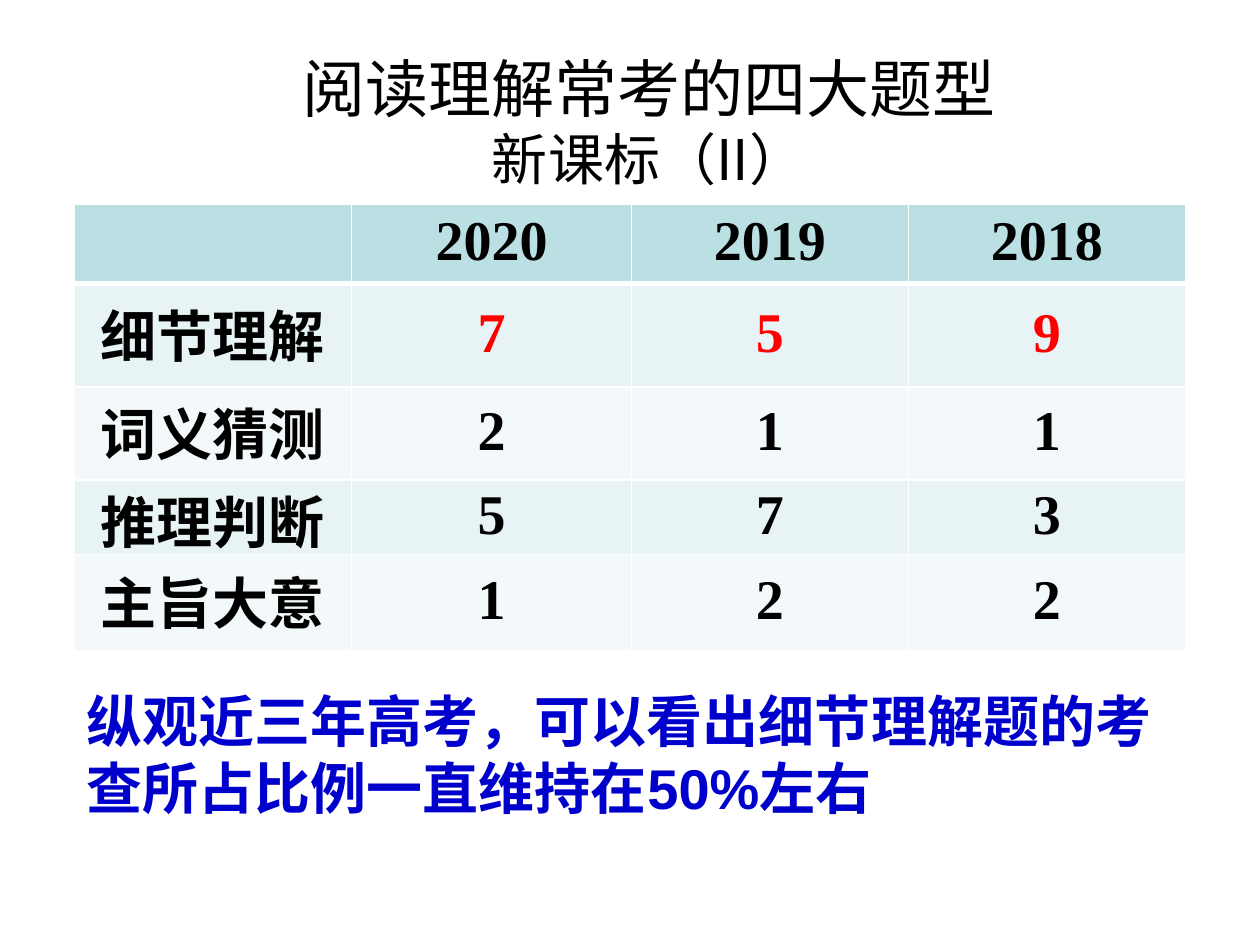
from lxml.etree import SubElement
from pptx import Presentation
from pptx.dml.color import RGBColor
from pptx.enum.text import MSO_ANCHOR as Anchor, PP_ALIGN as Align
from pptx.oxml import parse_xml
from pptx.oxml.ns import nsdecls, qn
from pptx.util import Cm, Pt

CJK = "Noto Sans CJK SC"
BLACK, RED, BLUE, WHITE = "000000", "FF0000", "0000CC", "FFFFFF"
HEADER_FILL, BAND_FILLS = "BBE0E3", ("E7F3F4", "F3F9FA")
COL_WIDTHS = (5.59, 5.64, 5.58, 5.59)
ROW_HEIGHTS = (1.6, 2.08, 1.88, 1.5, 1.93)
ROWS = (
    ("", "2020", "2019", "2018"),
    ("细节理解", "7", "5", "9"),
    ("词义猜测", "2", "1", "1"),
    ("推理判断", "5", "7", "3"),
    ("主旨大意", "1", "2", "2"),
)


def rgb(value):
    return RGBColor.from_string(value)


def set_font(font, size, name, color, bold=False):
    """Set the Latin typeface to name and the East Asian one to CJK."""
    font.size, font.name, font.bold = Pt(size), name, bold
    font.color.rgb = rgb(color)
    latin = font._element.find(qn("a:latin"))
    ea = SubElement(font._element, qn("a:ea"), typeface=CJK)
    latin.addnext(ea)


def set_borders(cell, **widths):
    """Draw white borders; widths are points keyed by side L, R, T, B."""
    tcPr = cell._tc.get_or_add_tcPr()
    for side, width in widths.items():
        tcPr.append(parse_xml(
            f'<a:ln{side} {nsdecls("a")} w="{Pt(width)}"><a:solidFill>'
            f'<a:srgbClr val="{WHITE}"/></a:solidFill></a:ln{side}>'))


def add_text_frame(slide, left, top, width, height):
    tf = slide.shapes.add_textbox(Cm(left), Cm(top), Cm(width), Cm(height)).text_frame
    tf.word_wrap = True
    return tf


def add_title(slide, left, top, width, height):
    tf = add_text_frame(slide, left, top, width, height)
    tf.vertical_anchor = Anchor.MIDDLE
    p = tf.paragraphs[0]
    p.alignment = Align.CENTER
    for text, size in (("阅读理解常考的四大题型", 36), ("新课标（II）", 32)):
        if p.runs:
            p.add_line_break()
        r = p.add_run()
        r.text = text
        set_font(r.font, size, CJK, BLACK)


def fill_cell(cell, text, row, col):
    cell.vertical_anchor = Anchor.MIDDLE
    cell.margin_left = cell.margin_right = Cm(0.18)
    cell.margin_top = cell.margin_bottom = Cm(0.1)
    set_borders(cell, L=1, R=1, T=3 if row == 1 else 1, B=3 if row == 0 else 1)
    cell.fill.solid()
    cell.fill.fore_color.rgb = rgb(BAND_FILLS[(row - 1) % 2] if row else HEADER_FILL)
    p = cell.text_frame.paragraphs[0]
    p.text = text
    p.alignment = Align.CENTER
    p.line_spacing = 0.9
    set_font(p.font, 32, "Times New Roman", RED if row == 1 and col else BLACK, True)


def add_question_table(slide, left, top):
    table = slide.shapes.add_table(
        len(ROWS), len(COL_WIDTHS), Cm(left), Cm(top),
        Cm(sum(COL_WIDTHS)), Cm(sum(ROW_HEIGHTS))).table
    table.first_row = table.horz_banding = False
    for column, width in zip(table.columns, COL_WIDTHS):
        column.width = Cm(width)
    for i, (height, texts) in enumerate(zip(ROW_HEIGHTS, ROWS)):
        table.rows[i].height = Cm(height)
        for j, text in enumerate(texts):
            fill_cell(table.cell(i, j), text, i, j)


def add_conclusion(slide, left, top, width, height):
    p = add_text_frame(slide, left, top, width, height).paragraphs[0]
    p.text = "纵观近三年高考，可以看出细节理解题的考查所占比例一直维持在50%左右"
    set_font(p.font, 32, "Arial", BLUE, True)


def main():
    prs = Presentation()
    prs.slide_width, prs.slide_height = Cm(25.4), Cm(19.05)
    slide = prs.slides.add_slide(prs.slide_layouts[6])
    add_title(slide, 1.9, 1.12, 22.35, 2.62)
    add_question_table(slide, 1.5, 4.12)
    add_conclusion(slide, 1.5, 13.72, 22.4, 3)
    prs.save("out.pptx")


if __name__ == "__main__":
    main()
